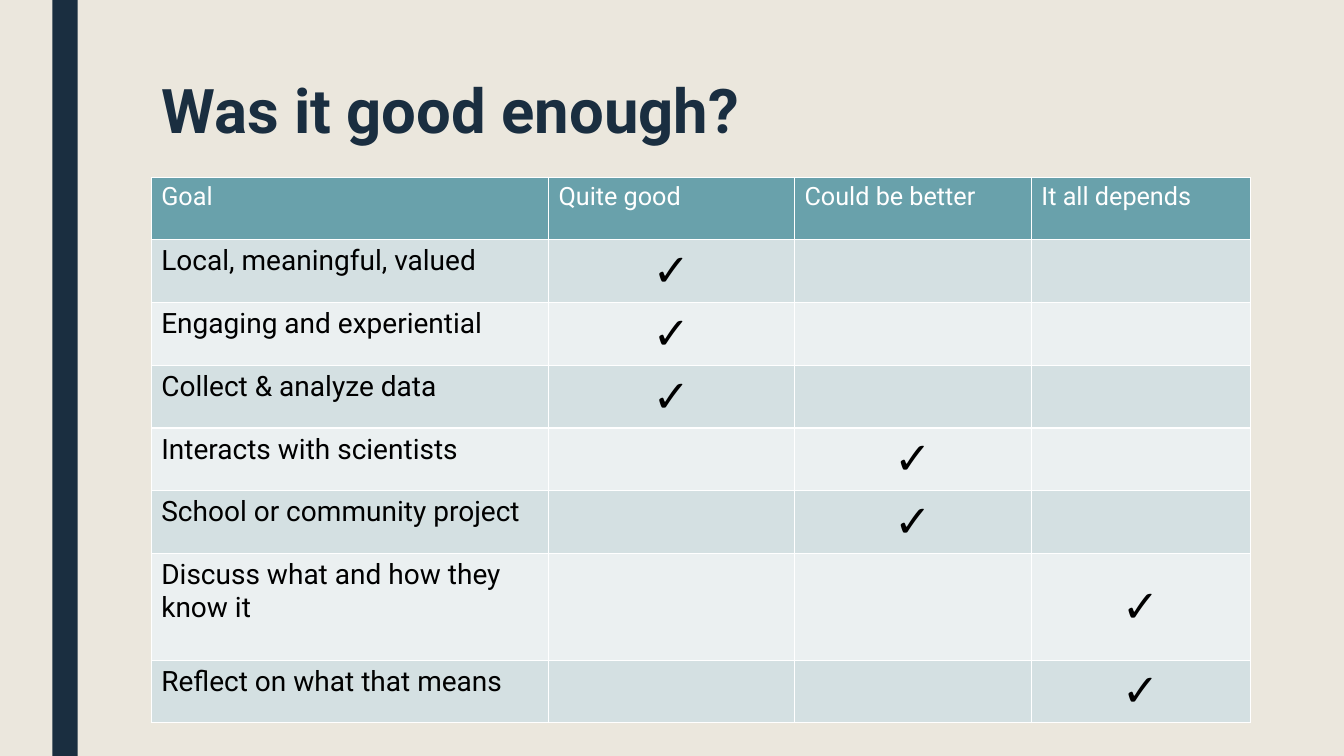
from lxml.etree import SubElement
from pptx import Presentation
from pptx.dml.color import RGBColor
from pptx.enum.shapes import MSO_SHAPE as Shape
from pptx.enum.text import MSO_ANCHOR as Anchor, PP_ALIGN as Align
from pptx.oxml.ns import qn
from pptx.util import Inches, Pt

TITLE = "Was it good enough?"
RATINGS = ["Quite good", "Could be better", "It all depends"]
GOALS = [
    ("Local, meaningful, valued", "Quite good"),
    ("Engaging and experiential", "Quite good"),
    ("Collect & analyze data", "Quite good"),
    ("Interacts with scientists", "Could be better"),
    ("School or community project", "Could be better"),
    ("Discuss what and how they know it", "It all depends"),
    ("Reflect on what that means", "It all depends"),
]
COLORS = {
    "background": "EBE7DD",
    "navy": "1A2E40",
    "header": "69A1AB",
    "odd": "D4E0E2",
    "even": "EBF0F1",
    "white": "FFFFFF",
    "black": "000000",
}
FORMATS = {
    "title": {"size": Pt(44), "bold": True, "color": "navy"},
    "header": {"size": Pt(18), "bold": False, "color": "white"},
    "goal": {"size": Pt(20), "bold": False, "color": "black"},
    "tick": {"size": Pt(32), "bold": False, "color": "black"},
}
COLUMN_WIDTHS = [3.94, 2.44, 2.35, 2.17]
ROW_HEIGHT, TALL_ROW_HEIGHT, TALL_ROW = 0.62, 1.06, 6


def paint(fill, color):
    fill.solid()
    fill.fore_color.rgb = RGBColor.from_string(COLORS[color])


def write(para, text, style):
    span = para.add_run()
    span.text = text
    span.font.name = "Roboto"
    for name, value in FORMATS[style].items():
        if name == "color":
            span.font.color.rgb = RGBColor.from_string(COLORS[value])
        else:
            setattr(span.font, name, value)


def add_borders(cell):
    properties = cell._tc.get_or_add_tcPr()
    for index, side in enumerate(("lnL", "lnR", "lnT", "lnB")):
        line = properties.makeelement(qn(f"a:{side}"), {"w": str(Pt(1))})
        fill = SubElement(line, qn("a:solidFill"))
        SubElement(fill, qn("a:srgbClr"), val=COLORS["white"])
        properties.insert(index, line)


deck = Presentation()
deck.slide_width, deck.slide_height = Inches(13.33), Inches(7.5)
page = deck.slides.add_slide(deck.slide_layouts[5])
paint(page.background.fill, "background")

bar = page.shapes.add_shape(
    Shape.RECTANGLE, Inches(0.52), 0, Inches(0.25), deck.slide_height)
bar.shadow.inherit = False
paint(bar.fill, "navy")
bar.line.fill.background()

rows = [["Goal", *RATINGS]] + [
    [goal] + ["✓" if rating == result else "" for rating in RATINGS]
    for goal, result in GOALS
]
heights = [TALL_ROW_HEIGHT if index == TALL_ROW else ROW_HEIGHT
           for index in range(len(rows))]
table = page.shapes.add_table(
    len(rows), len(COLUMN_WIDTHS), Inches(1.5), Inches(1.76),
    Inches(sum(COLUMN_WIDTHS)), Inches(sum(heights))).table
for column, width in zip(table.columns, COLUMN_WIDTHS):
    column.width = Inches(width)
for row, height in zip(table.rows, heights):
    row.height = Inches(height)

for r, texts in enumerate(rows):
    band = "header" if r == 0 else "odd" if r % 2 else "even"
    for c, text in enumerate(texts):
        cell = table.cell(r, c)
        paint(cell.fill, band)
        add_borders(cell)
        if not text:
            continue
        style = "header" if r == 0 else "tick" if c else "goal"
        para = cell.text_frame.paragraphs[0]
        if style == "tick":
            cell.vertical_anchor = Anchor.MIDDLE
            para.alignment = Align.CENTER
        write(para, text, style)

title = page.shapes.title
title.left, title.top = Inches(1.5), Inches(0.75)
title.width, title.height = Inches(10.5), Inches(1.62)
title.text_frame.word_wrap = True
title.text_frame.vertical_anchor = Anchor.TOP
para = title.text_frame.paragraphs[0]
para.alignment = Align.LEFT
para.line_spacing = 0.89
write(para, TITLE, "title")

deck.save("out.pptx")
